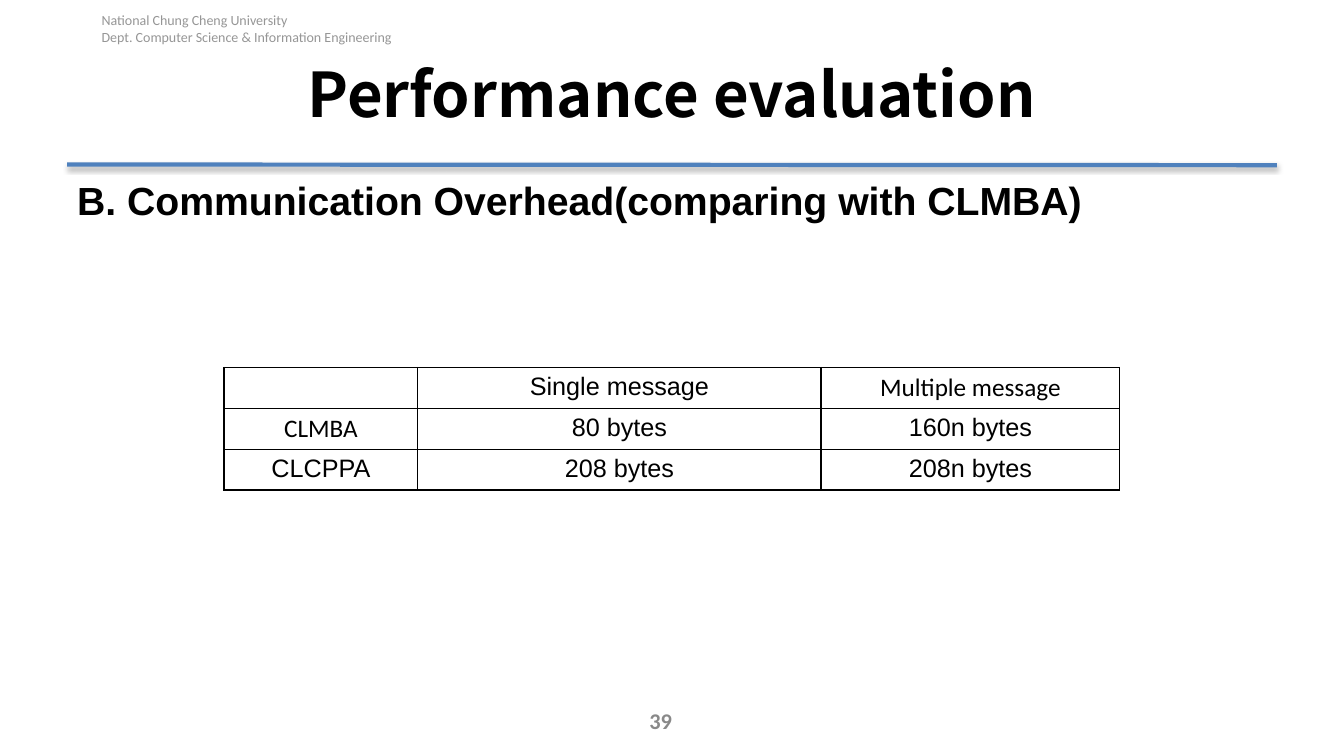
import pptx
import pptx.dml.color
import pptx.enum.shapes
import pptx.enum.text
import pptx.oxml
import pptx.oxml.ns
import pptx.util

Pt = pptx.util.Pt
ALIGN = pptx.enum.text.PP_ALIGN
ANCHOR = pptx.enum.text.MSO_ANCHOR

# Content
AFFILIATION = ["National Chung Cheng University",
               "Dept. Computer Science & Information Engineering"]
TITLE = "Performance evaluation"
SECTION = "B. Communication Overhead(comparing with CLMBA)"
PAGE_NUMBER = "39"
OVERHEAD = [
    ["", "Single message", "Multiple message"],
    ["CLMBA", "80 bytes", "160n bytes"],
    ["CLCPPA", "208 bytes", "208n bytes"],
]
CALIBRI_CELLS = {"Multiple message", "CLMBA"}
COLUMN_WIDTHS = [138.5, 288, 213.5]
ROW_HEIGHT = 29.2
BLACK = "000000"


def color(hex_code):
    return pptx.dml.color.RGBColor.from_string(hex_code)


def write(frame, lines, font, size, hex_code, bold=False, align=ALIGN.LEFT,
          anchor=ANCHOR.TOP):
    frame.word_wrap = True
    frame.vertical_anchor = anchor
    frame.text = "\n".join(lines)
    for paragraph in frame.paragraphs:
        paragraph.alignment = align
        paragraph.font.name = font
        paragraph.font.size = Pt(size)
        paragraph.font.bold = bold
        paragraph.font.color.rgb = color(hex_code)


def add_text(box, *args, **kwargs):
    frame = slide.shapes.add_textbox(*map(Pt, box)).text_frame
    write(frame, *args, **kwargs)


def add_borders(cell):
    properties = cell._tc.get_or_add_tcPr()
    for side in ("lnL", "lnR", "lnT", "lnB"):
        properties.append(pptx.oxml.parse_xml(
            f'<a:{side} {pptx.oxml.ns.nsdecls("a")} w="{Pt(1)}"><a:solidFill>'
            f'<a:srgbClr val="{BLACK}"/></a:solidFill></a:{side}>'))


presentation = pptx.Presentation()
presentation.slide_width, presentation.slide_height = Pt(960), Pt(540)
slide = presentation.slides.add_slide(presentation.slide_layouts[5])

# Affiliation header
add_text((65.5, 5, 327, 31.5), AFFILIATION, "Calibri", 10, "969696")

# Rule under the title, with its soft shadow
rule = slide.shapes.add_connector(pptx.enum.shapes.MSO_CONNECTOR.STRAIGHT,
                                  Pt(48), Pt(117.5), Pt(912), Pt(118))
rule.line.color.rgb = color("4F81BD")
rule.line.width = Pt(3)
rule._element.spPr.append(pptx.oxml.parse_xml(
    f'<a:effectLst {pptx.oxml.ns.nsdecls("a")}>'
    f'<a:outerShdw blurRad="{Pt(3.1)}" dist="{Pt(1.8)}" dir="5400000" '
    f'rotWithShape="0"><a:srgbClr val="{BLACK}"><a:alpha val="35000"/>'
    '</a:srgbClr></a:outerShdw></a:effectLst>'))

# Title
title = slide.shapes.title
title.left, title.top, title.width, title.height = map(Pt, (48, 21.6, 864, 90))
write(title.text_frame, [TITLE], "Noto Sans CJK TC", 44, BLACK, bold=True,
      align=ALIGN.CENTER, anchor=ANCHOR.MIDDLE)

# Page number and section heading
add_text((360, 500.5, 224, 28.8), [PAGE_NUMBER], "Calibri", 16, "898989",
         bold=True, align=ALIGN.CENTER, anchor=ANCHOR.MIDDLE)
add_text((48, 122.5, 851, 75), [SECTION], "Arial", 28, BLACK, bold=True)

# Overhead table
overhead = slide.shapes.add_table(
    len(OVERHEAD), len(COLUMN_WIDTHS), Pt(160), Pt(262.4),
    Pt(sum(COLUMN_WIDTHS)), Pt(ROW_HEIGHT * len(OVERHEAD))).table
overhead.first_row = overhead.horz_banding = False
for column, width in zip(overhead.columns, COLUMN_WIDTHS):
    column.width = Pt(width)
for row, values in zip(overhead.rows, OVERHEAD):
    row.height = Pt(ROW_HEIGHT)
    for cell, value in zip(row.cells, values):
        font = "Calibri" if value in CALIBRI_CELLS else "Arial"
        write(cell.text_frame, [value], font, 18, BLACK, align=ALIGN.CENTER)
        add_borders(cell)
        cell.fill.background()

presentation.save("out.pptx")
